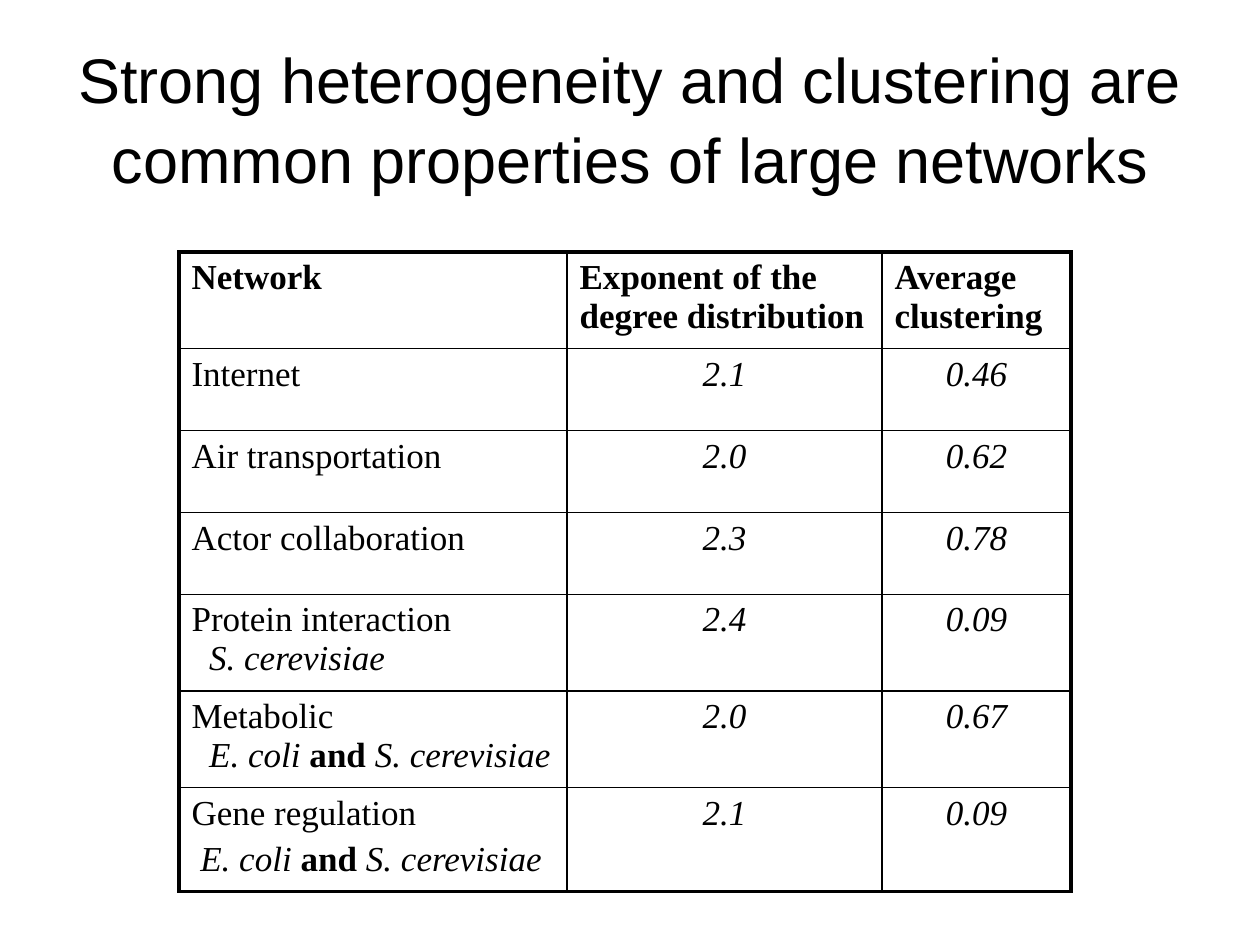
from lxml import etree
from pptx import Presentation
from pptx.dml.color import RGBColor
from pptx.enum.text import MSO_ANCHOR, PP_ALIGN
from pptx.oxml.ns import qn
from pptx.util import Inches, Pt

CENTER, LEFT = PP_ALIGN.CENTER, PP_ALIGN.LEFT
MIDDLE = MSO_ANCHOR.MIDDLE
BLACK = "000000"
THIN, THICK = 1, 2.25

TITLE = "Strong heterogeneity and clustering are common properties of large networks"
HEADINGS = ["Network", "Exponent of the degree distribution", "Average clustering"]
YEAST = [("S. cerevisiae", "i")]
BACTERIA_AND_YEAST = [("E. coli ", "i"), ("and", "b"), (" S. cerevisiae", "i")]
# network, organisms, organism indent, space before organisms, exponent, clustering
NETWORKS = [
    ("Internet", [], 0, 0, "2.1", "0.46"),
    ("Air transportation", [], 0, 0, "2.0", "0.62"),
    ("Actor collaboration", [], 0, 0, "2.3", "0.78"),
    ("Protein interaction", YEAST, 0.14, 0, "2.4", "0.09"),
    ("Metabolic", BACTERIA_AND_YEAST, 0.14, 0, "2.0", "0.67"),
    ("Gene regulation", BACTERIA_AND_YEAST, 0.07, 4, "2.1", "0.09"),
]
COLUMN_WIDTHS = [3.08, 2.5, 1.5]
ROW_HEIGHT = 0.65


def color(value):
    return RGBColor.from_string(value)


def add_run(paragraph, text, size, font, style=""):
    run = paragraph.add_run()
    run.text = text
    run.font.size = Pt(size)
    run.font.name = font
    run.font.color.rgb = color(BLACK)
    run.font.bold = style == "b"
    run.font.italic = style == "i"


def write_cell(cell, text, style="", align=LEFT):
    paragraph = cell.text_frame.paragraphs[0]
    paragraph.alignment = align
    add_run(paragraph, text, 20, "Times New Roman", style)


def add_organisms(cell, organisms, indent, space):
    paragraph = cell.text_frame.add_paragraph()
    paragraph.space_before = Pt(space)
    paragraph._p.get_or_add_pPr().set("marL", str(Inches(indent)))
    for text, style in organisms:
        add_run(paragraph, text, 20, "Times New Roman", style)


def set_borders(cell, outer_sides):
    properties = cell._tc.get_or_add_tcPr()
    for side, is_outer in zip("LRTB", outer_sides):
        width = THICK if is_outer else THIN
        line = etree.SubElement(properties, qn(f"a:ln{side}"), w=str(Pt(width)))
        fill = etree.SubElement(line, qn("a:solidFill"))
        etree.SubElement(fill, qn("a:srgbClr"), val=BLACK)


def add_title(slide):
    box = slide.shapes.add_textbox(Inches(0.5), Inches(0.3), Inches(9), Inches(1.25))
    frame = box.text_frame
    frame.word_wrap = True
    frame.vertical_anchor = MIDDLE
    paragraph = frame.paragraphs[0]
    paragraph.alignment = CENTER
    paragraph.line_spacing = 1.05
    add_run(paragraph, TITLE, 36, "Arial")


def add_network_table(slide):
    row_count, column_count = len(NETWORKS) + 1, len(HEADINGS)
    table = slide.shapes.add_table(
        row_count, column_count, Inches(1.42), Inches(2),
        Inches(sum(COLUMN_WIDTHS)), Inches(ROW_HEIGHT * row_count),
    ).table
    table.first_row = table.horz_banding = False
    for column, width in zip(table.columns, COLUMN_WIDTHS):
        column.width = Inches(width)
    for row in table.rows:
        row.height = Inches(ROW_HEIGHT)
    for r in range(row_count):
        for c in range(column_count):
            cell = table.cell(r, c)
            set_borders(cell, (c == 0, c == column_count - 1, r == 0, r == row_count - 1))
            cell.fill.background()
    for c, heading in enumerate(HEADINGS):
        write_cell(table.cell(0, c), heading, "b")
    for r, (network, organisms, indent, space, *values) in enumerate(NETWORKS, 1):
        write_cell(table.cell(r, 0), network)
        if organisms:
            add_organisms(table.cell(r, 0), organisms, indent, space)
        for c, value in enumerate(values, 1):
            write_cell(table.cell(r, c), value, "i", CENTER)


def main():
    deck = Presentation()
    deck.slide_width, deck.slide_height = Inches(10), Inches(7.5)
    slide = deck.slides.add_slide(deck.slide_layouts[6])
    add_title(slide)
    add_network_table(slide)
    deck.save("out.pptx")


if __name__ == "__main__":
    main()
